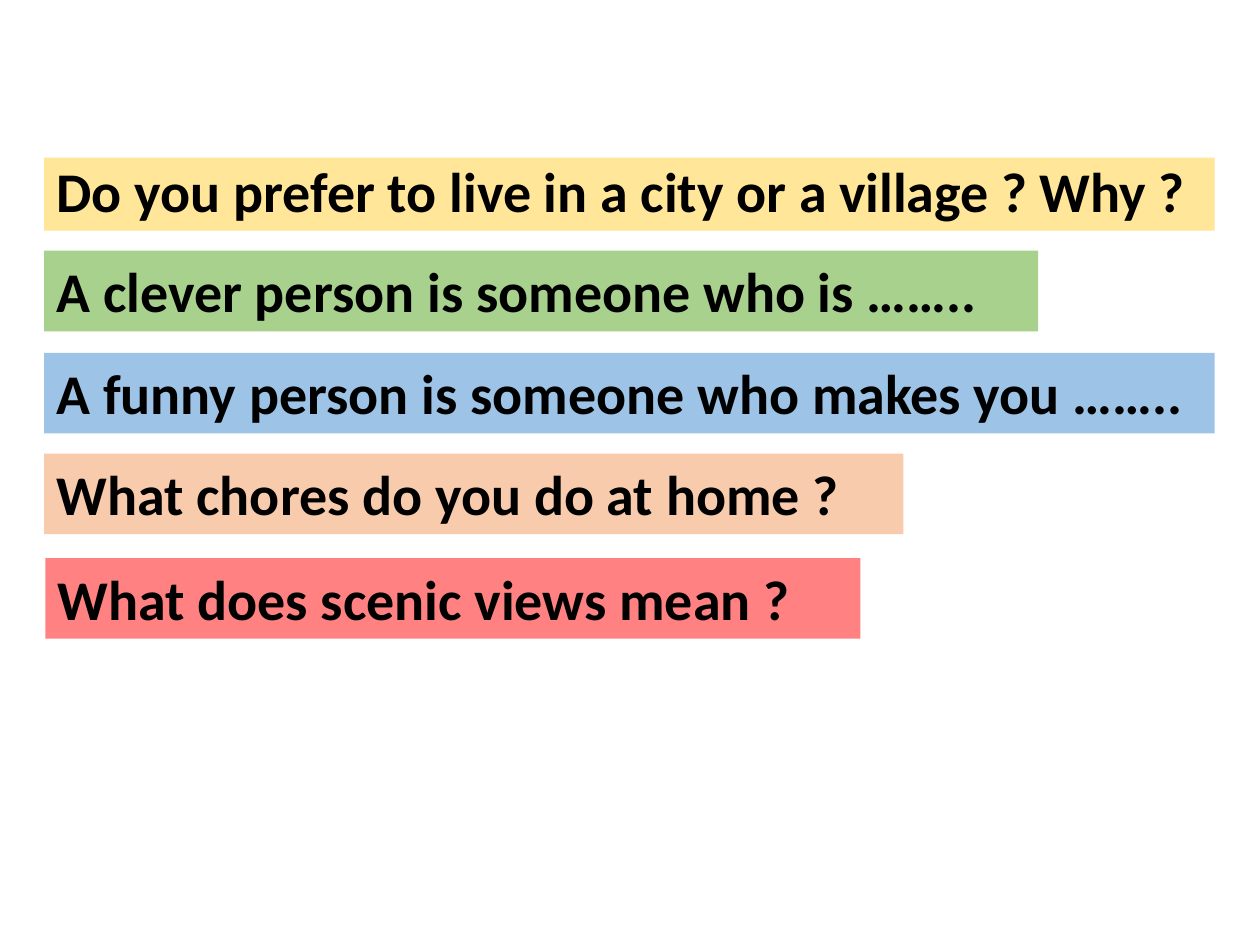
from dataclasses import dataclass

from pptx import Presentation
from pptx.dml.color import RGBColor
from pptx.enum.text import MSO_ANCHOR
from pptx.util import Pt

TOP = MSO_ANCHOR.TOP
LEFT = 25.2
TALL = 46.08
HUES = {
    "yellow": "FFE699",
    "green": "A9D18E",
    "blue": "9DC3E6",
    "peach": "F8CBAD",
    "red": "FF8181",
    "ink": "000000",
}


@dataclass
class Strip:
    text: str
    hue: str
    top: float
    width: float
    left: float = LEFT
    height: float = TALL
    lines: float = 1.0


STRIPS = [
    Strip("Do you prefer to live in a city or a village ? Why ?",
          "yellow", 90, 668.88, height=41.76, lines=0.9),
    Strip("A clever person is someone who is ……..", "green", 143.28, 568.08),
    Strip("A funny person is someone who makes you ……..",
          "blue", 201.6, 668.88),
    Strip("What chores do you do at home ?", "peach", 259.2, 491.04),
    Strip("What does scenic views mean ?", "red", 318.96, 465.84, left=25.92),
]


def draw(slide, strip: Strip) -> None:
    box = slide.shapes.add_textbox(
        Pt(strip.left), Pt(strip.top), Pt(strip.width), Pt(strip.height))
    box.fill.solid()
    box.fill.fore_color.rgb = RGBColor.from_string(HUES[strip.hue])
    frame = box.text_frame
    frame.word_wrap = True
    frame.vertical_anchor = TOP
    para = frame.paragraphs[0]
    para.text = strip.text
    para.line_spacing = strip.lines
    font = para.font
    font.name = "Calibri"
    font.size = Pt(32)
    font.bold = True
    font.color.rgb = RGBColor.from_string(HUES["ink"])


def main() -> None:
    deck = Presentation()
    deck.slide_width, deck.slide_height = Pt(720), Pt(540)
    slide = deck.slides.add_slide(deck.slide_layouts[6])
    # Question strips, top to bottom
    for strip in STRIPS:
        draw(slide, strip)
    deck.save("out.pptx")


if __name__ == "__main__":
    main()
